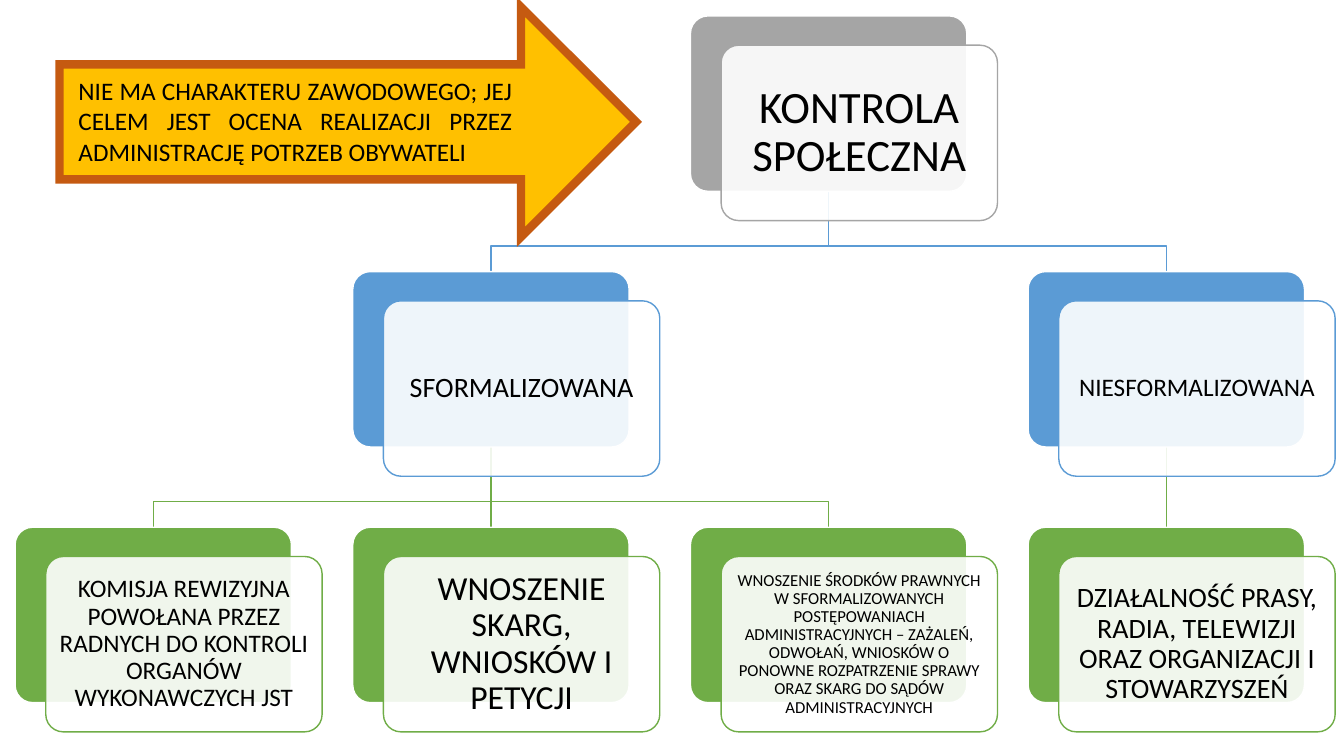
from dataclasses import dataclass

import pptx
import pptx.dml.color
import pptx.enum.shapes
import pptx.enum.text
import pptx.oxml
import pptx.oxml.ns
import pptx.presentation
import pptx.shapes.autoshape
import pptx.shapes.base
import pptx.slide
import pptx.text.text
import pptx.util

Pt = pptx.util.Pt
RGBColor = pptx.dml.color.RGBColor
SHAPE = pptx.enum.shapes.MSO_SHAPE
ALIGN = pptx.enum.text.PP_ALIGN
ANCHOR = pptx.enum.text.MSO_ANCHOR

BLACK = RGBColor(0x00, 0x00, 0x00)
WHITE = RGBColor(0xFF, 0xFF, 0xFF)
GREY = RGBColor(0xA5, 0xA5, 0xA5)
BLUE = RGBColor(0x5B, 0x9B, 0xD5)
GREEN = RGBColor(0x70, 0xAD, 0x47)
GOLD = RGBColor(0xFF, 0xC0, 0x00)
RUST = RGBColor(0xC5, 0x5A, 0x11)

FONT = "Calibri"
LEVEL_COLORS = (GREY, BLUE, GREEN)
LEFT, COLUMN_STEP = 10.8, 241.2
TOP, LEVEL_STEP = 11.4, 182.6
CARD_WIDTH, CARD_HEIGHT = 197.4, 125.3
PANEL_SHIFT_X, PANEL_SHIFT_Y = 21.9, 20.9
ELBOW_RISE = 18.2


@dataclass(frozen=True)
class Card:
    column: int
    level: int
    text: str
    size: int

    @property
    def left(self) -> float:
        return LEFT + self.column * COLUMN_STEP

    @property
    def top(self) -> float:
        return TOP + self.level * LEVEL_STEP

    @property
    def center(self) -> float:
        return self.left + CARD_WIDTH / 2

    @property
    def bottom(self) -> float:
        return self.top + CARD_HEIGHT

    @property
    def color(self) -> RGBColor:
        return LEVEL_COLORS[self.level]


SOCIAL = Card(2, 0, "KONTROLA SPOŁECZNA", 32)
FORMAL = Card(1, 1, "SFORMALIZOWANA", 20)
INFORMAL = Card(3, 1, "NIESFORMALIZOWANA", 18)
COMMITTEE = Card(
    0, 2,
    "KOMISJA REWIZYJNA POWOŁANA PRZEZ RADNYCH DO KONTROLI ORGANÓW "
    "WYKONAWCZYCH JST", 18)
PETITIONS = Card(1, 2, "WNOSZENIE SKARG, WNIOSKÓW I PETYCJI", 24)
REMEDIES = Card(
    2, 2,
    "WNOSZENIE ŚRODKÓW PRAWNYCH W SFORMALIZOWANYCH POSTĘPOWANIACH "
    "ADMINISTRACYJNYCH – ZAŻALEŃ, ODWOŁAŃ, WNIOSKÓW O PONOWNE "
    "ROZPATRZENIE SPRAWY ORAZ SKARG DO SĄDÓW ADMINISTRACYJNYCH", 12)
MEDIA = Card(
    3, 2,
    "DZIAŁALNOŚĆ PRASY, RADIA, TELEWIZJI ORAZ ORGANIZACJI I "
    "STOWARZYSZEŃ", 20)

CARDS = (SOCIAL, FORMAL, COMMITTEE, PETITIONS, REMEDIES, INFORMAL, MEDIA)
BRANCHES = (
    (INFORMAL, MEDIA), (SOCIAL, INFORMAL), (FORMAL, REMEDIES),
    (FORMAL, PETITIONS), (FORMAL, COMMITTEE), (SOCIAL, FORMAL),
)
ARROW_TEXT = (
    "NIE MA CHARAKTERU ZAWODOWEGO; JEJ CELEM JEST OCENA REALIZACJI PRZEZ "
    "ADMINISTRACJĘ POTRZEB OBYWATELI"
)


def add_filled(page: pptx.slide.Slide, kind: SHAPE, left: float, top: float,
               width: float, height: float, fill: RGBColor, line: RGBColor,
               line_width: float) -> pptx.shapes.autoshape.Shape:
    shape = page.shapes.add_shape(kind, Pt(left), Pt(top), Pt(width), Pt(height))
    shape.shadow.inherit = False
    shape.fill.solid()
    shape.fill.fore_color.rgb = fill
    shape.line.color.rgb = line
    shape.line.width = Pt(line_width)
    return shape


def write(frame: pptx.text.text.TextFrame, text: str, size: int,
          alignment: ALIGN) -> pptx.text.text._Paragraph:
    frame.word_wrap = True
    para = frame.paragraphs[0]
    para.text = text
    para.alignment = alignment
    para.font.name = FONT
    para.font.size = Pt(size)
    para.font.color.rgb = BLACK
    return para


def add_branch(page: pptx.slide.Slide, parent: Card, child: Card) -> None:
    """Join a parent to its child, with an elbow when their columns differ."""
    start = (Pt(parent.center), Pt(parent.bottom))
    end = (Pt(child.center), Pt(child.top))
    if parent.column == child.column:
        branch = page.shapes.add_connector(
            pptx.enum.shapes.MSO_CONNECTOR.STRAIGHT, *start, *end)
        properties = branch.element.find(pptx.oxml.ns.qn("p:spPr"))
    else:
        bend = Pt(child.top - ELBOW_RISE)
        builder = page.shapes.build_freeform(*start)
        builder.add_line_segments(
            [(start[0], bend), (end[0], bend), end], close=False)
        branch = builder.convert_to_shape()
        branch.shadow.inherit = False
        branch.fill.background()
        properties = None
    branch.line.color.rgb = child.color
    branch.line.width = Pt(1)
    if properties is not None:
        pptx.oxml.ns.qn("a:effectLst")
        properties.append(pptx.oxml.parse_xml(
            f'<a:effectLst {pptx.oxml.ns.nsdecls("a")}/>'))


def add_card(page: pptx.slide.Slide, card: Card) -> None:
    """Draw a coloured back plate and the translucent text panel over it."""
    add_filled(page, SHAPE.ROUNDED_RECTANGLE, card.left, card.top,
               CARD_WIDTH, CARD_HEIGHT, card.color, WHITE, 1).adjustments[0] = 0.1
    panel = add_filled(page, SHAPE.ROUNDED_RECTANGLE,
                       card.left + PANEL_SHIFT_X, card.top + PANEL_SHIFT_Y,
                       CARD_WIDTH, CARD_HEIGHT, WHITE, card.color, 1)
    panel.adjustments[0] = 0.1
    fill_color = panel.element.spPr.find(
        pptx.oxml.ns.qn("a:solidFill"))[0]
    fill_color.append(pptx.oxml.parse_xml(
        f'<a:alpha {pptx.oxml.ns.nsdecls("a")} val="90000"/>'))

    frame = panel.text_frame
    frame.vertical_anchor = ANCHOR.MIDDLE
    inset = Pt(0.3 * card.size)
    frame.margin_left = frame.margin_right = inset
    frame.margin_top = frame.margin_bottom = inset
    write(frame, card.text, card.size, ALIGN.CENTER).line_spacing = 0.9


def add_arrow(page: pptx.slide.Slide) -> None:
    arrow = add_filled(page, SHAPE.RIGHT_ARROW, 42.5, 5, 411.8, 164.2,
                       GOLD, RUST, 6)
    arrow.element.spPr.find(pptx.oxml.ns.qn("a:ln")).append(
        pptx.oxml.parse_xml(
            f'<a:miter {pptx.oxml.ns.nsdecls("a")} lim="800000"/>'))
    box = page.shapes.add_textbox(Pt(49), Pt(50.4), Pt(324), Pt(72.7))
    box.text_frame.auto_size = pptx.enum.text.MSO_AUTO_SIZE.SHAPE_TO_FIT_TEXT
    write(box.text_frame, ARROW_TEXT, 18, ALIGN.JUSTIFY)


def main() -> None:
    deck = pptx.Presentation()
    deck.slide_width, deck.slide_height = Pt(960), Pt(540)
    page = deck.slides.add_slide(deck.slide_layouts[6])
    for parent, child in BRANCHES:
        add_branch(page, parent, child)
    for card in CARDS:
        add_card(page, card)
    add_arrow(page)
    deck.save("out.pptx")


if __name__ == "__main__":
    main()
